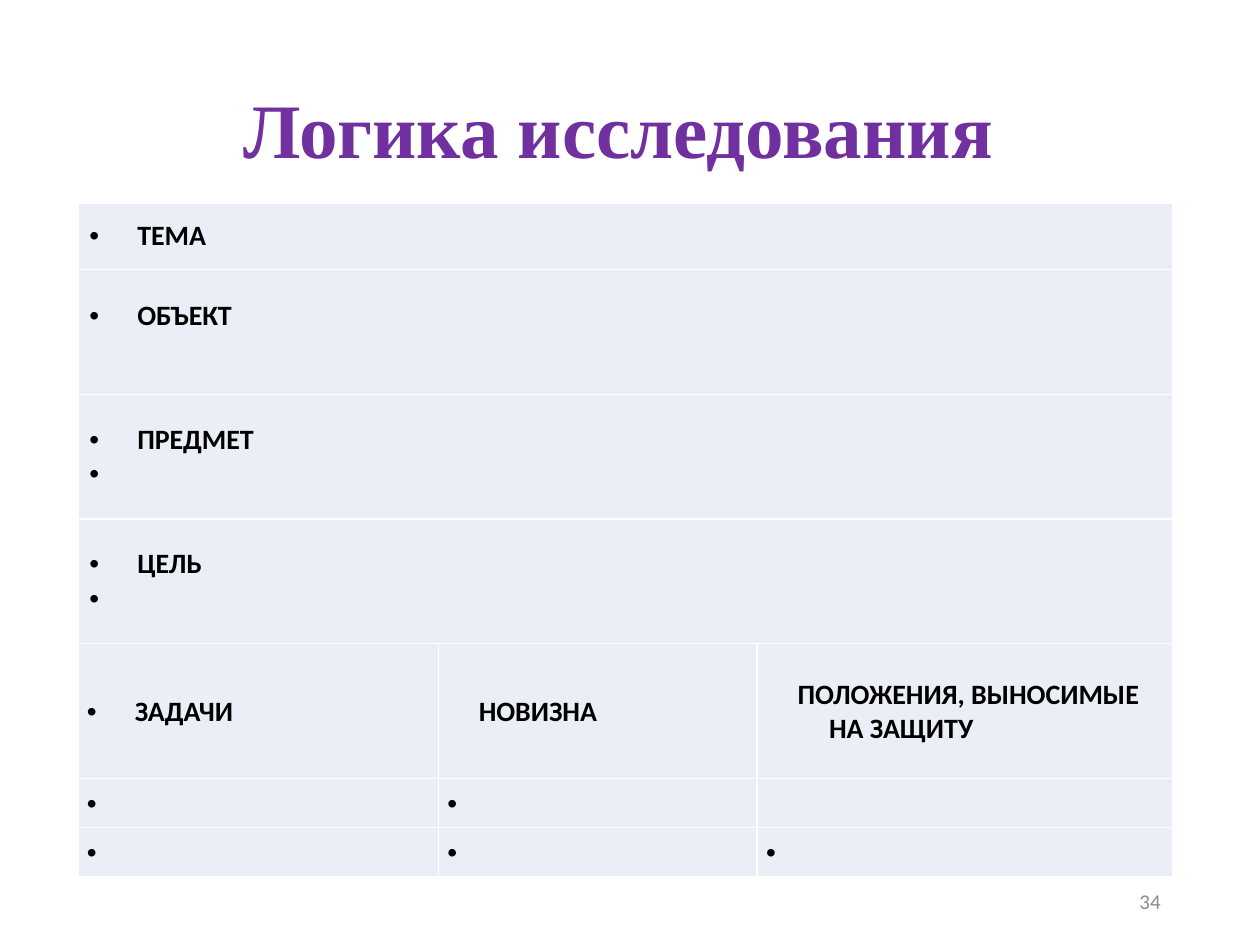
import pptx
import pptx.dml.color
import pptx.enum.text
import pptx.oxml
import pptx.oxml.ns
import pptx.util
from dataclasses import dataclass

Inches, Pt = pptx.util.Inches, pptx.util.Pt
ALIGN, ANCHOR = pptx.enum.text.PP_ALIGN, pptx.enum.text.MSO_ANCHOR


@dataclass(frozen=True)
class Theme:
    heading_font: str = "Times New Roman"
    body_font: str = "Calibri"
    title: str = "7030A0"
    ink: str = "000000"
    muted: str = "8C8C8C"
    cell: str = "EAEFF7"
    border: str = "FFFFFF"
    title_size: int = 44
    body_size: int = 16
    number_size: int = 12


THEME = Theme()

# Content: a non-breaking space is an unfilled bullet
TITLE = "Логика исследования"
PAGE_NUMBER = "34"
BLANK = " "
WIDE_ROWS = [["ТЕМА"], ["ОБЪЕКТ"], ["ПРЕДМЕТ", BLANK], ["ЦЕЛЬ", BLANK]]
SPLIT_ROWS = [
    ["ЗАДАЧИ", "НОВИЗНА", "ПОЛОЖЕНИЯ, ВЫНОСИМЫЕ НА ЗАЩИТУ"],
    [BLANK, BLANK, ""],
    [BLANK, BLANK, BLANK],
]
UNBULLETED = {"НОВИЗНА", "ПОЛОЖЕНИЯ, ВЫНОСИМЫЕ НА ЗАЩИТУ", ""}

# Geometry in inches
COLUMNS = [2.86, 2.53, 3.3]
ROWS = [0.53, 0.99, 0.99, 0.99, 1.07, 0.39, 0.39]
WIDE_MARGINS = (0.09, 0.05, 0.09, 0.05)
RAISED_MARGINS = (0.09, 0.05, 0.09, 0.31)
SPLIT_MARGINS = (0.07, 0.01, 0.07, 0)


def set_font(para, name, size, color, bold=False):
    font = para.font
    font.name, font.size, font.bold = name, Pt(size), bold
    font.color.rgb = pptx.dml.color.RGBColor.from_string(color)


def add_xml(parent, xml, index=None):
    tag, rest = xml.split(" ", 1)
    element = pptx.oxml.parse_xml(f"{tag} {pptx.oxml.ns.nsdecls('a')} {rest}")
    parent.insert(len(parent) if index is None else index, element)


def add_label(page, area, text, anchor, align):
    box = page.shapes.add_textbox(*map(Inches, area))
    box.text_frame.word_wrap = True
    box.text_frame.vertical_anchor = anchor
    para = box.text_frame.paragraphs[0]
    para.text, para.alignment = text, align
    return para


def indent(para, bulleted):
    left, hanging = (0.38, -0.38) if bulleted else (0.5, -0.25)
    properties = para._p.get_or_add_pPr()
    properties.set("marL", str(Inches(left)))
    properties.set("indent", str(Inches(hanging)))
    if bulleted:
        add_xml(properties, '<a:buFont typeface="Arial"/>')
        add_xml(properties, '<a:buChar char="•"/>')
    else:
        add_xml(properties, "<a:buNone />")


def fill_cell(cell, lines, margins):
    cell.fill.solid()
    cell.fill.fore_color.rgb = pptx.dml.color.RGBColor.from_string(THEME.cell)
    cell.vertical_anchor = ANCHOR.MIDDLE
    (cell.margin_left, cell.margin_top,
     cell.margin_right, cell.margin_bottom) = map(Inches, margins)
    for index, side in enumerate(("lnL", "lnR", "lnT", "lnB")):
        add_xml(cell._tc.get_or_add_tcPr(),
                f'<a:{side} w="{Pt(1)}"><a:solidFill><a:srgbClr val="{THEME.border}"/>'
                f"</a:solidFill></a:{side}>", index)
    cell.text = "\n".join(lines)
    for para, line in zip(cell.text_frame.paragraphs, lines):
        indent(para, line not in UNBULLETED)
        set_font(para, THEME.body_font, THEME.body_size, THEME.ink, bold=line != BLANK)


def add_logic_table(page):
    frame = page.shapes.add_table(len(ROWS), len(COLUMNS), Inches(0.62), Inches(1.61),
                                  Inches(sum(COLUMNS)), Inches(sum(ROWS)))
    table = frame.table
    table.first_row = table.horz_banding = False
    for column, width in zip(table.columns, COLUMNS):
        column.width = Inches(width)
    for row, height in zip(table.rows, ROWS):
        row.height = Inches(height)

    # Full-width rows
    last = len(COLUMNS) - 1
    for index, lines in enumerate(WIDE_ROWS):
        table.cell(index, 0).merge(table.cell(index, last))
        margins = RAISED_MARGINS if lines == ["ОБЪЕКТ"] else WIDE_MARGINS
        fill_cell(table.cell(index, 0), lines, margins)

    # Three-column rows
    for index, texts in enumerate(SPLIT_ROWS, start=len(WIDE_ROWS)):
        for column, text in enumerate(texts):
            fill_cell(table.cell(index, column), [text], SPLIT_MARGINS)


def main():
    deck = pptx.Presentation()
    deck.slide_width, deck.slide_height = Inches(10), Inches(7.5)
    page = deck.slides.add_slide(deck.slide_layouts[6])

    # Title
    para = add_label(page, (0.68, 0.41, 8.46, 1.03), TITLE, ANCHOR.BOTTOM, ALIGN.CENTER)
    para.line_spacing = 0.9
    set_font(para, THEME.heading_font, THEME.title_size, THEME.title, bold=True)

    # Page number
    para = add_label(page, (7.06, 6.95, 2.25, 0.4), PAGE_NUMBER, ANCHOR.MIDDLE, ALIGN.RIGHT)
    set_font(para, THEME.body_font, THEME.number_size, THEME.muted)

    add_logic_table(page)
    deck.save("out.pptx")


if __name__ == "__main__":
    main()
